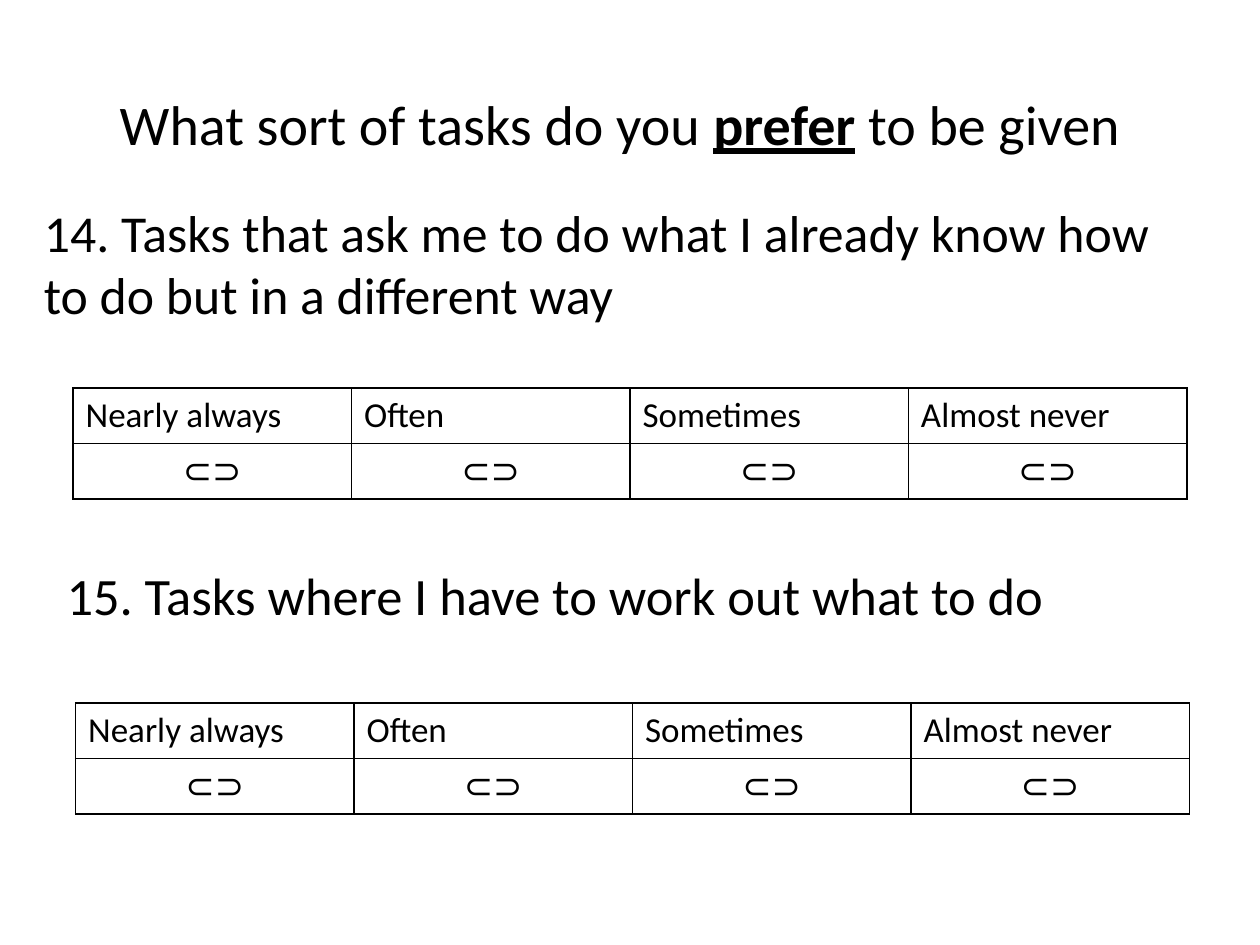
"""Build a questionnaire slide on preferred kinds of task."""
from lxml.etree import SubElement
from pptx import Presentation
from pptx.dml.color import RGBColor
from pptx.enum.text import MSO_ANCHOR as Anchor, PP_ALIGN as Align
from pptx.oxml.ns import qn
from pptx.util import Inches, Pt

BLACK = RGBColor(0, 0, 0)
ANSWERS = ["Nearly always", "Often", "Sometimes", "Almost never"]


def add_span(para, text, size, strong=False):
    span = para.add_run()
    span.text = text
    span.font.name = "Calibri"
    span.font.size = Pt(size)
    span.font.color.rgb = BLACK
    span.font.bold = strong
    span.font.underline = strong


def add_borders(cell):
    props = cell._tc.get_or_add_tcPr()
    for side in ("a:lnL", "a:lnR", "a:lnT", "a:lnB"):
        line = SubElement(props, qn(side), w=str(Pt(1)))
        fill = SubElement(line, qn("a:solidFill"))
        SubElement(fill, qn("a:srgbClr"), val=str(BLACK))


deck = Presentation()
deck.slide_width, deck.slide_height = Inches(10), Inches(7.5)
page = deck.slides.add_slide(deck.slide_layouts[6])

title = page.shapes.add_textbox(Inches(0.42), Inches(0.5), Inches(9), Inches(0.95))
title.text_frame.word_wrap = True
title.text_frame.vertical_anchor = Anchor.MIDDLE
para = title.text_frame.paragraphs[0]
para.alignment = Align.CENTER
add_span(para, "What sort of tasks do you ", 32)
add_span(para, "prefer", 32, strong=True)
add_span(para, " to be given", 32)

questions = [
    ("14. Tasks that ask me to do what I already know how to do but in a different way",
     29.6, 0.25, 1.54, 1, 0.58, 3.08),
    ("15. Tasks where I have to work out what to do",
     30, 0.43, 4.42, 0.83, 0.6, 5.58),
]
for text, size, left, top, height, grid_left, grid_top in questions:
    box = page.shapes.add_textbox(Inches(left), Inches(top), Inches(9.17), Inches(height))
    box.text_frame.word_wrap = True
    para = box.text_frame.paragraphs[0]
    para.space_before = Pt(2)
    add_span(para, text, size)

    grid = page.shapes.add_table(2, len(ANSWERS), Inches(grid_left), Inches(grid_top),
                                 Inches(8.84), Inches(0.88)).table
    grid.first_row = grid.horz_banding = False
    for row in grid.rows:
        row.height = Inches(0.44)
    for index, answer in enumerate(ANSWERS):
        grid.columns[index].width = Inches(2.21)
        for row, (label, align) in enumerate([(answer, Align.LEFT), ("⊂⊃", Align.CENTER)]):
            cell = grid.cell(row, index)
            add_borders(cell)
            cell.fill.background()
            para = cell.text_frame.paragraphs[0]
            para.alignment = align
            add_span(para, label, 20)

deck.save("out.pptx")
